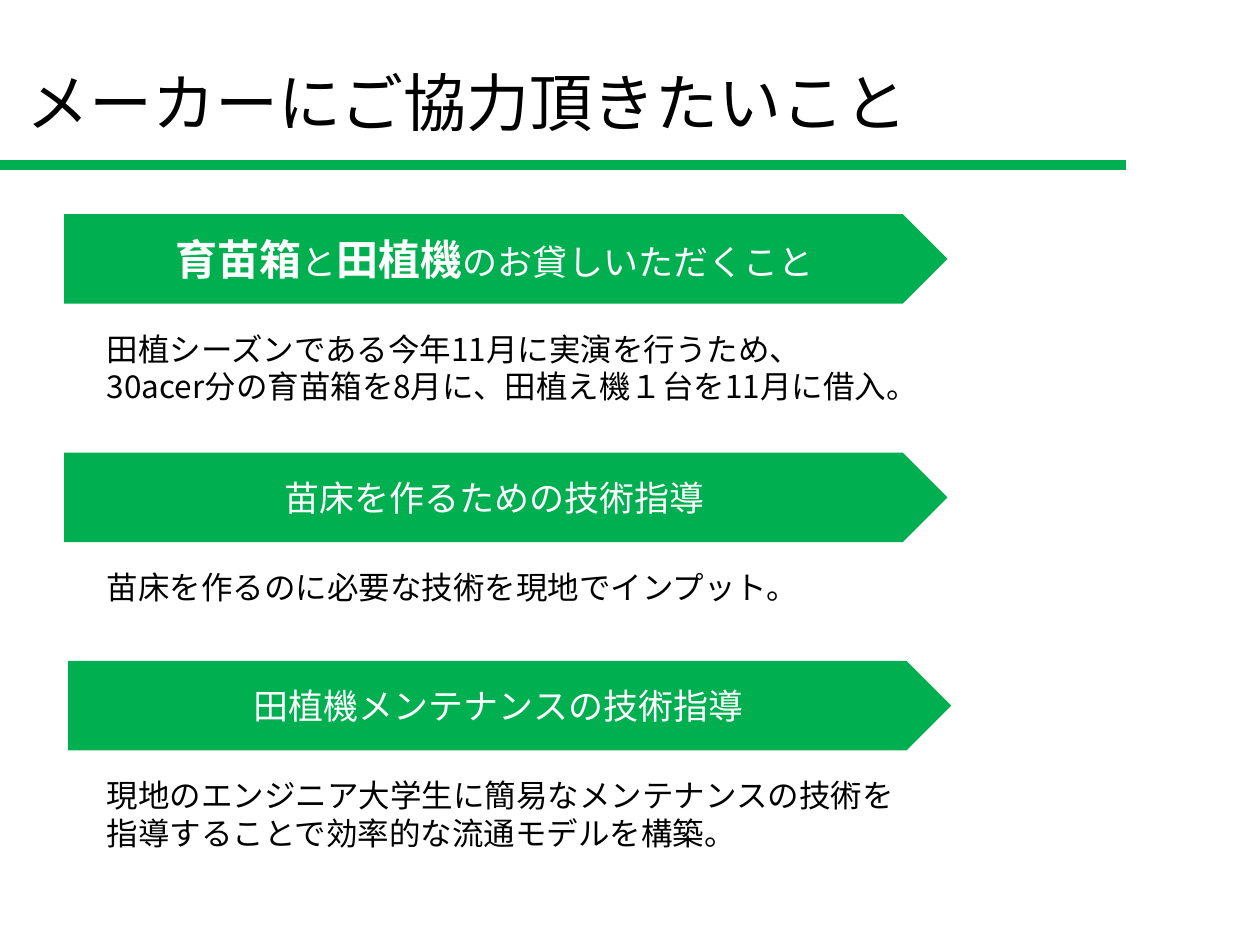
from dataclasses import dataclass

from lxml.etree import SubElement
from pptx import Presentation
from pptx.dml.color import RGBColor
from pptx.enum.shapes import MSO_CONNECTOR, MSO_SHAPE
from pptx.enum.text import MSO_ANCHOR, MSO_AUTO_SIZE, PP_ALIGN
from pptx.oxml.ns import qn
from pptx.slide import Slide
from pptx.text.text import _Run
from pptx.util import Pt

GREEN = RGBColor(0x00, 0xB0, 0x50)
WHITE = RGBColor(0xFF, 0xFF, 0xFF)
BLACK = RGBColor(0x00, 0x00, 0x00)
FONT = "Noto Sans CJK JP"

ARROW_WIDTH, ARROW_HEIGHT = 504.7, 51.1
DETAIL_LEFT, DETAIL_GAP = 54, 11.3
LINE_HEIGHT, INSETS = 22, 7.2


@dataclass
class Phrase:
    text: str
    strong: bool = False


@dataclass
class Request:
    left: float
    top: float
    heading: list[Phrase]
    details: list[str]
    detail_lines: int
    detail_width: float = 470.9


REQUESTS = [
    Request(36.7, 122.4,
            [Phrase("育苗箱", True), Phrase("と"), Phrase("田植機", True),
             Phrase("のお貸しいただくこと")],
            ["田植シーズンである今年11月に実演を行うため、",
             "30acer分の育苗箱を8月に、田植え機１台を11月に借入。"], 2, 561.6),
    Request(36.7, 258.7, [Phrase("苗床を作るための技術指導")],
            ["苗床を作るのに必要な技術を現地でインプット。"], 1),
    Request(38.9, 377.7, [Phrase("田植機メンテナンスの技術指導")],
            ["現地のエンジニア大学生に簡易なメンテナンスの技術を"
             "指導することで効率的な流通モデルを構築。"], 2),
]


def format_run(r: _Run, size: float, color: RGBColor, bold: bool = False) -> None:
    """Apply the font to Latin and Japanese characters alike."""
    r.font.size = Pt(size)
    r.font.bold = bold
    r.font.color.rgb = color
    r.font.name = FONT
    latin = r.font._element.find(qn("a:latin"))
    ea = SubElement(r.font._element, qn("a:ea"), typeface=FONT)
    latin.addnext(ea)


def add_title(s: Slide, text: str) -> None:
    title = s.shapes.title
    title.left, title.top, title.width, title.height = Pt(8), Pt(27.5), Pt(533.5), Pt(61)
    tf = title.text_frame
    tf.text = text
    tf.word_wrap = True
    tf.auto_size = MSO_AUTO_SIZE.NONE
    tf.vertical_anchor = MSO_ANCHOR.MIDDLE
    p = tf.paragraphs[0]
    p.alignment = PP_ALIGN.LEFT
    format_run(p.runs[0], 36, BLACK)


def add_title_rule(s: Slide) -> None:
    rule = s.shapes.add_connector(MSO_CONNECTOR.STRAIGHT, Pt(-20), Pt(94.2), Pt(643.5), Pt(94.2))
    rule.line.color.rgb = GREEN
    rule.line.width = Pt(6)
    SubElement(rule._element.spPr, qn("a:effectLst"))


def add_heading(s: Slide, request: Request) -> None:
    sp = s.shapes.add_shape(MSO_SHAPE.PENTAGON, Pt(request.left), Pt(request.top),
                            Pt(ARROW_WIDTH), Pt(ARROW_HEIGHT))
    sp.shadow.inherit = False
    sp.fill.solid()
    sp.fill.fore_color.rgb = GREEN
    sp.line.fill.background()
    tf = sp.text_frame
    tf.vertical_anchor = MSO_ANCHOR.MIDDLE
    p = tf.paragraphs[0]
    p.alignment = PP_ALIGN.CENTER
    for phrase in request.heading:
        r = p.add_run()
        r.text = phrase.text
        format_run(r, 24 if phrase.strong else 20, WHITE, phrase.strong)


def add_details(s: Slide, request: Request) -> None:
    top = request.top + ARROW_HEIGHT + DETAIL_GAP
    height = request.detail_lines * LINE_HEIGHT + INSETS
    box = s.shapes.add_textbox(Pt(DETAIL_LEFT), Pt(top), Pt(request.detail_width), Pt(height))
    tf = box.text_frame
    tf.word_wrap = True
    tf.auto_size = MSO_AUTO_SIZE.SHAPE_TO_FIT_TEXT
    tf.text = "\n".join(request.details)
    for p in tf.paragraphs:
        format_run(p.runs[0], 18, BLACK)


def main() -> None:
    prs = Presentation()
    prs.slide_width, prs.slide_height = Pt(720), Pt(540)
    s = prs.slides.add_slide(prs.slide_layouts[5])
    add_title(s, "メーカーにご協力頂きたいこと")
    add_title_rule(s)
    for request in REQUESTS:
        add_heading(s, request)
        add_details(s, request)
    prs.save("out.pptx")


if __name__ == "__main__":
    main()
